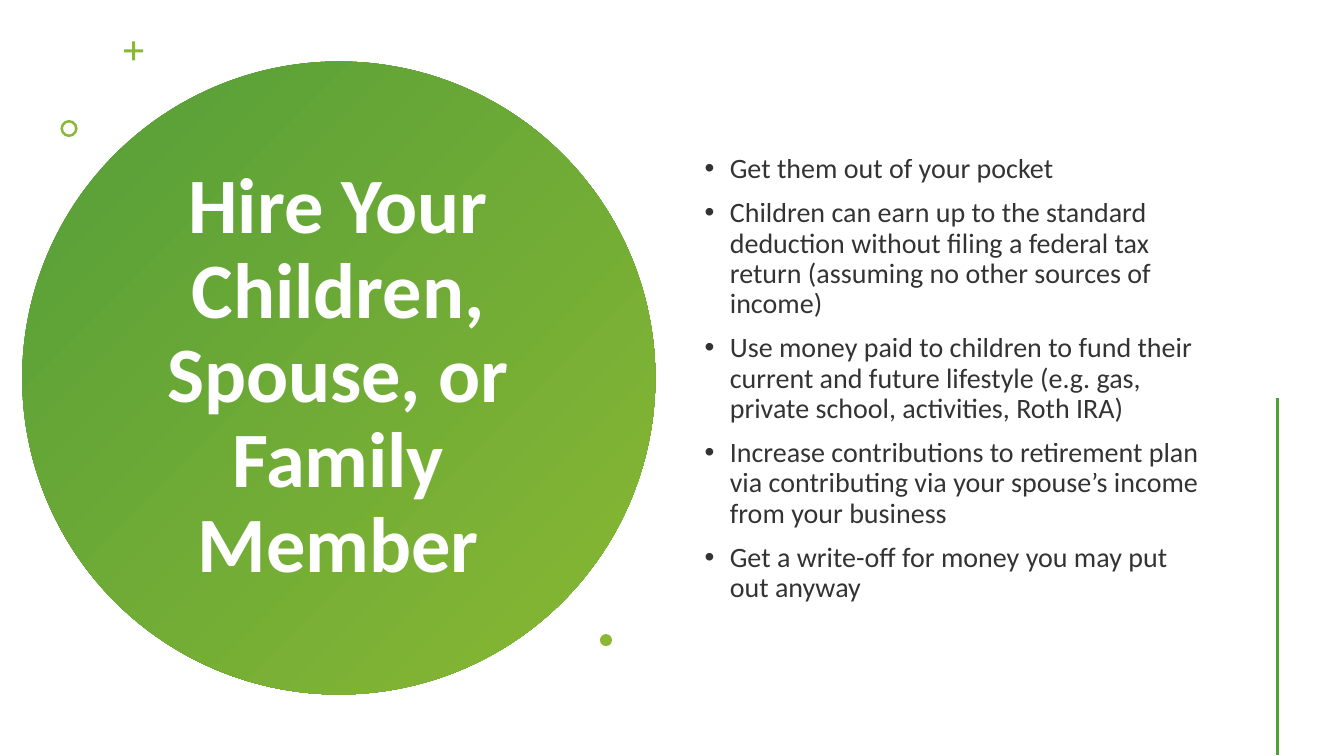
from dataclasses import dataclass

from lxml.etree import SubElement
from pptx import Presentation
from pptx.dml.color import RGBColor as RGB
from pptx.enum.shapes import MSO_CONNECTOR as Link, MSO_SHAPE as Shape
from pptx.enum.text import MSO_ANCHOR as Anchor, PP_ALIGN as Align
from pptx.oxml.ns import qn
from pptx.util import Inches, Pt


@dataclass(frozen=True)
class Theme:
    font: str = "Calibri"
    dark: RGB = RGB(0x54, 0x9E, 0x39)
    lime: RGB = RGB(0x8A, 0xB8, 0x33)
    white: RGB = RGB(255, 255, 255)
    ink: RGB = RGB(0, 0, 0)
    alpha: int = 80
    title: int = 56
    body: int = 20
    rule: float = 2


THEME = Theme()
TITLE = "Hire Your Children, Spouse, or Family Member"
POINTS = [
    "Get them out of your pocket",
    "Children can earn up to the standard deduction without filing a federal "
    "tax return (assuming no other sources of income)",
    "Use money paid to children to fund their current and future lifestyle "
    "(e.g. gas, private school, activities, Roth IRA)",
    "Increase contributions to retirement plan via contributing via your "
    "spouse’s income from your business",
    "Get a write-off for money you may put out anyway",
]


def apply(target, form):
    for name, value in form.items():
        setattr(target, name, value)


def add_mark(slide, kind, x, y, size, adjust=None):
    """Add a square shape with no outline."""
    mark = slide.shapes.add_shape(
        kind, Inches(x), Inches(y), Inches(size), Inches(size))
    mark.shadow.inherit = False
    mark.line.fill.background()
    mark.fill.solid()
    mark.fill.fore_color.rgb = THEME.lime
    if adjust is not None:
        mark.adjustments[0] = adjust
    return mark


def add_frame(slide, x, y, w, h):
    box = slide.shapes.add_textbox(Inches(x), Inches(y), Inches(w), Inches(h))
    frame = box.text_frame
    apply(frame, {"word_wrap": True, "vertical_anchor": Anchor.MIDDLE})
    return frame


def add_run(para, text, size, color, bold=False):
    para.line_spacing = 0.9
    run = para.add_run()
    run.text = text
    apply(run.font, {"name": THEME.font, "size": Pt(size), "bold": bold})
    run.font.color.rgb = color
    return run


def add_title(slide, x, y, size):
    # Gradient disc
    disc = add_mark(slide, Shape.OVAL, x, y, size)
    disc.fill.gradient()
    disc.fill.gradient_angle = 315
    for stop, color in zip(disc.fill.gradient_stops, (THEME.dark, THEME.lime)):
        stop.color.rgb = color

    # Heading
    frame = add_frame(slide, x + 1.14, y + 0.8, 3.99, 4.67)
    para = frame.paragraphs[0]
    para.alignment = Align.CENTER
    add_run(para, TITLE, THEME.title, THEME.white, True)

    # Small marks around the disc
    add_mark(slide, Shape.CROSS, x + 1.01, y - 0.2, 0.19, 0.42)
    add_mark(slide, Shape.DONUT, x + 0.38, y + 0.58, 0.17, 0.15)
    add_mark(slide, Shape.OVAL, x + 5.73, y + 5.68, 0.12)


def add_points(slide, x, y, w, h):
    frame = add_frame(slide, x, y, w, h)
    for i, text in enumerate(POINTS):
        para = frame.add_paragraph() if i else frame.paragraphs[0]
        if i:
            para.space_before = Pt(10)
        run = add_run(para, text, THEME.body, THEME.ink)
        # Hanging bullet
        props = para._p.get_or_add_pPr()
        props.set("marL", str(Inches(0.25)))
        props.set("indent", str(-Inches(0.25)))
        SubElement(props, qn("a:buFont"), typeface="Arial")
        SubElement(props, qn("a:buChar"), char="•")
        # Softened ink
        ink = run._r.find(".//" + qn("a:srgbClr"))
        SubElement(ink, qn("a:alpha"), val=str(THEME.alpha * 1000))


def add_rule(slide, x, y, h):
    rule = slide.shapes.add_connector(
        Link.STRAIGHT, Inches(x), Inches(y), Inches(x), Inches(y + h))
    rule.line.color.rgb = THEME.dark
    rule.line.width = Pt(THEME.rule)
    SubElement(rule._element.spPr, qn("a:effectLst"))


def main():
    deck = Presentation()
    apply(deck, {"slide_width": Inches(13.33), "slide_height": Inches(7.5)})
    slide = deck.slides.add_slide(deck.slide_layouts[6])
    add_title(slide, 0.22, 0.61, 6.28)
    add_points(slide, 6.89, 0.57, 5.22, 6.38)
    add_rule(slide, 12.67, 3.95, 3.54)
    deck.save("out.pptx")


if __name__ == "__main__":
    main()
